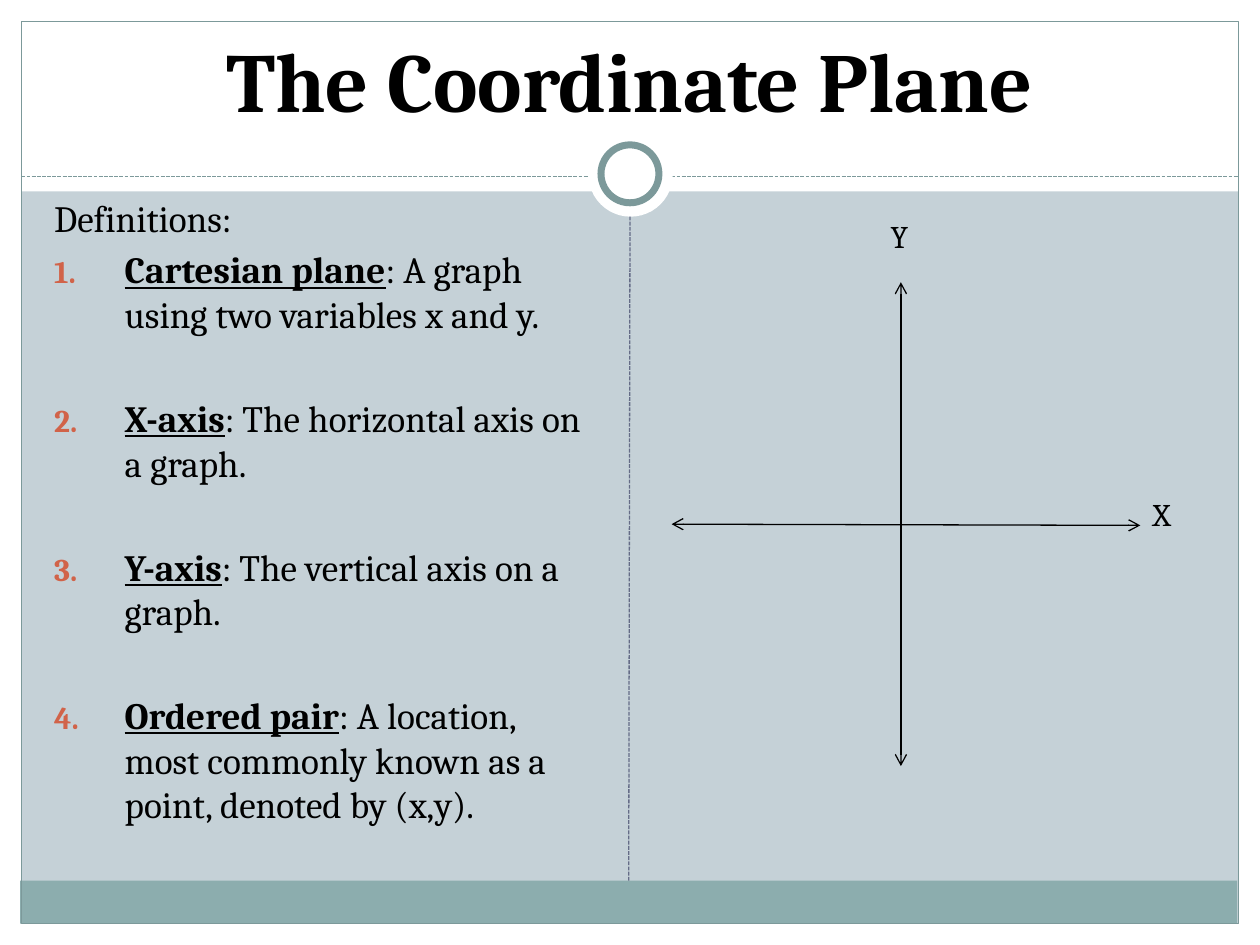
"""Build a slide defining the parts of the coordinate plane."""
from lxml import etree
from pptx import Presentation, util as u
from pptx.dml.color import RGBColor
from pptx.enum import dml, shapes, text
from pptx.oxml.ns import qn

C = {"bg": "C5D1D7", "white": "FFFFFF", "band": "8CADAE", "frame": "7C999A",
     "divider": "646B86", "black": "000000", "number": "D16349"}
FONT = "Cambria"
RECT, OVAL = shapes.MSO_SHAPE.RECTANGLE, shapes.MSO_SHAPE.OVAL


def add_line(s, x1, y1, x2, y2, color, dashed=False):
    ends = [u.Inches(v) for v in (x1, y1, x2, y2)]
    cn = s.shapes.add_connector(shapes.MSO_CONNECTOR.STRAIGHT, *ends)
    cn.line.color.rgb = RGBColor.from_string(C[color])
    cn.line.width = u.Pt(0.75)
    if dashed:
        cn.line.dash_style = dml.MSO_LINE.SQUARE_DOT
    etree.SubElement(cn._element.spPr, qn("a:effectLst"))
    return cn


def add_run(p, words, size, **fmt):
    r = p.add_run()
    r.text = words
    r.font.color.rgb = RGBColor.from_string(C["black"])
    for name, value in {"name": FONT, "size": u.Pt(size), **fmt}.items():
        setattr(r.font, name, value)


prs = Presentation()
prs.slide_width, prs.slide_height = u.Inches(10), u.Inches(7.5)
s = prs.slides.add_slide(prs.slide_layouts[1])
s.background.fill.solid()
s.background.fill.fore_color.rgb = RGBColor.from_string(C["bg"])

panels = [
    (RECT, 0, 7.33, 10, 0.17, "white", 0),
    (RECT, 0, 0, 10, 1.52, "white", 0),
    (RECT, 0, 0, 0.17, 7.5, "white", 0),
    (RECT, 9.83, 0, 0.17, 7.5, "white", 0),
    (RECT, 0.16, 6.99, 9.66, 0.34, "band", 0),
    (RECT, 0.17, 0.17, 9.66, 7.16, None, 0.75),
    (OVAL, 4.67, 1.05, 0.67, 0.67, "white", 0),
    (OVAL, 4.77, 1.15, 0.46, 0.46, "white", 4),
]
for kind, x, y, w, h, fill, border in panels:
    if kind == OVAL and not border:
        add_line(s, 0.17, 1.4, 9.83, 1.4, "frame", dashed=True)
    sp = s.shapes.add_shape(kind, *[u.Inches(v) for v in (x, y, w, h)])
    sp.shadow.inherit = False
    if fill:
        sp.fill.solid()
        sp.fill.fore_color.rgb = RGBColor.from_string(C[fill])
    else:
        sp.fill.background()
    if border:
        sp.line.color.rgb = RGBColor.from_string(C["frame"])
        sp.line.width = u.Pt(border)
    else:
        sp.line.fill.background()
add_line(s, 4.99, 6.99, 5, 1.72, "divider", dashed=True)

title, body = s.shapes.title, s.placeholders[1]
frames = [(title, 0.33, 0.25, 9.33, 0.83, text.MSO_ANCHOR.BOTTOM),
          (body, 0.33, 1.5, 4.42, 5.12, text.MSO_ANCHOR.TOP)]
for sp, x, y, w, h, anchor in frames:
    sp.left, sp.top, sp.width, sp.height = [u.Inches(v) for v in (x, y, w, h)]
    s.shapes._spTree.append(sp._element)
    for name, value in {"vertical_anchor": anchor, "word_wrap": True,
                        "auto_size": text.MSO_AUTO_SIZE.NONE}.items():
        setattr(sp.text_frame, name, value)
p = title.text_frame.paragraphs[0]
p.alignment = text.PP_ALIGN.CENTER
add_run(p, "The Coordinate Plane", 48, bold=True)

definitions = [
    ("Cartesian plane", "A graph using two variables x and y."),
    ("X-axis", "The horizontal axis on a graph."),
    ("Y-axis", "The vertical axis on a graph."),
    ("Ordered pair", "A location, most commonly known as a point, denoted by (x,y)."),
]
tf = body.text_frame
p = tf.paragraphs[0]
p.space_before = u.Pt(4)
pPr = p._p.get_or_add_pPr()
pPr.set("marL", str(u.Inches(0.3)))
pPr.set("indent", str(u.Inches(-0.3)))
etree.SubElement(pPr, qn("a:buNone"))
add_run(p, "Definitions:", 21.2)
for i, (term, meaning) in enumerate(definitions):
    p = tf.add_paragraph()
    p.space_before = u.Pt(34 if i else 4)
    pPr = p._p.get_or_add_pPr()
    pPr.set("marL", str(u.Inches(0.56)))
    pPr.set("indent", str(u.Inches(-0.56)))
    clr = etree.SubElement(pPr, qn("a:buClr"))
    etree.SubElement(clr, qn("a:srgbClr"), val=C["number"])
    etree.SubElement(pPr, qn("a:buSzPct"), val="85000")
    etree.SubElement(pPr, qn("a:buFont"), typeface=FONT)
    etree.SubElement(pPr, qn("a:buAutoNum"), type="arabicPeriod")
    add_run(p, term, 21.2, bold=True, underline=True)
    add_run(p, f": {meaning}", 21.2)

for ends in [(7.15, 2.24, 7.15, 6.08), (5.33, 4.16, 9.05, 4.17)]:
    ln = add_line(s, *ends, "black").line._get_or_add_ln()
    for end in ("a:headEnd", "a:tailEnd"):
        etree.SubElement(ln, qn(end), type="arrow")

for label, x, y in [("X", 9.05, 3.88), ("Y", 6.97, 1.67)]:
    sp = s.shapes.add_textbox(*[u.Inches(v) for v in (x, y, 0.36, 0.47)])
    sp.text_frame.word_wrap = True
    add_run(sp.text_frame.paragraphs[0], label, 18)

prs.save("out.pptx")
